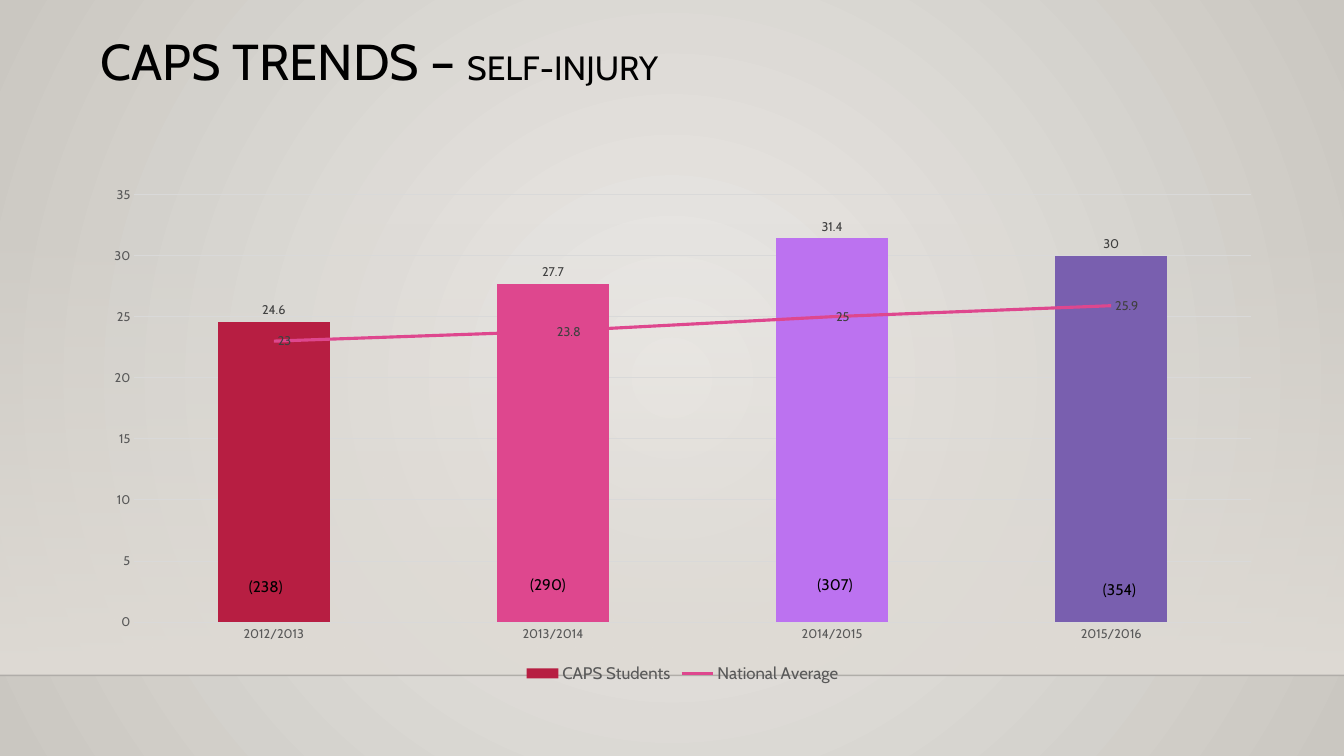
from lxml.etree import SubElement
from pptx import Presentation
from pptx.chart.data import CategoryChartData
from pptx.dml.color import RGBColor
from pptx.enum.chart import (XL_CHART_TYPE, XL_LABEL_POSITION, XL_LEGEND_POSITION,
                             XL_MARKER_STYLE, XL_TICK_MARK)
from pptx.enum.shapes import MSO_CONNECTOR, MSO_SHAPE
from pptx.oxml import parse_xml
from pptx.oxml.ns import nsdecls, qn
from pptx.util import Inches, Pt

W, H = 13.33, 7.5
FLOOR = 6.7
FONT = "Cabin"
TITLE = [("CAPS TRENDS – ", 36), ("SELF-INJURY", 24)]
YEARS = ["2012/2013", "2013/2014", "2014/2015", "2015/2016"]
SERIES = {"CAPS Students": [24.6, 27.7, 31.4, 30],
          "National Average": [23, 23.8, 25, 25.9]}
BAR_COLORS = ["B71E42", "DE478E", "BC72F0", "795FAF"]
AVERAGE_COLOR = "DE478E"
GRID_COLOR = "D9D9D9"
COUNTS = [("(238)", 2.37, 5.68), ("(290)", 5.16, 5.66),
          ("(307)", 8.01, 5.66), ("(354)", 10.84, 5.71)]


def rgb(value):
    return RGBColor.from_string(value)


def style(font, size, color="000000"):
    for name, value in {"name": FONT, "size": Pt(size)}.items():
        setattr(font, name, value)
    font.color.rgb = rgb(color)


def outline(line, color, width):
    line.color.rgb = rgb(color)
    line.width = Pt(width)


def gradient(fill, colors):
    fill.gradient()
    for stop, color in zip(fill.gradient_stops, colors):
        stop.color.rgb = rgb(color)


def set_alpha(color_element, percent):
    SubElement(color_element, qn("a:alpha")).set("val", str(percent * 1000))


def add_text(s, runs, left, top, width, height, **paragraph_format):
    tf = s.shapes.add_textbox(*map(Inches, (left, top, width, height))).text_frame
    tf.word_wrap = True
    p = tf.paragraphs[0]
    for name, value in paragraph_format.items():
        setattr(p, name, value)
    for text, size in runs:
        r = p.add_run()
        r.text = text
        style(r.font, size)


def add_backdrop(s):
    gradient(s.background.fill, ["ECEAE7", "CAC7C1"])
    lin = s.element.find(".//" + qn("a:lin"))
    lin.getparent().replace(lin, parse_xml(
        f'<a:path {nsdecls("a")} path="circle">'
        '<a:fillToRect l="50000" t="50000" r="50000" b="50000"/></a:path>'))

    wall = s.shapes.add_shape(MSO_SHAPE.RECTANGLE, 0, Inches(2.21), Inches(W), Inches(FLOOR - 2.21))
    wall.shadow.inherit = False
    wall.line.fill.background()
    gradient(wall.fill, ["DFDBD5", "DFDBD5"])
    wall.fill.gradient_angle = 270
    set_alpha(wall.element.spPr.find(".//" + qn("a:srgbClr")), 0)

    edge = s.shapes.add_connector(MSO_CONNECTOR.STRAIGHT, 0, Inches(FLOOR), Inches(W), Inches(FLOOR))
    outline(edge.line, "000001", 1)
    set_alpha(edge.element.spPr.find(".//" + qn("a:srgbClr")), 20)
    SubElement(edge.element.spPr, qn("a:effectLst"))


def move_to_line_plot(chart):
    bars = chart.plots[0]._element
    ser = bars.findall(qn("c:ser"))[1]
    lines = parse_xml(f'<c:lineChart {nsdecls("c")}><c:grouping val="standard"/>'
                      '<c:varyColors val="0"/><c:marker val="1"/></c:lineChart>')
    for bar_only in ser.findall(qn("c:invertIfNegative")):
        ser.remove(bar_only)
    lines.insert(2, ser)
    for axis in bars.findall(qn("c:axId")):
        SubElement(lines, qn("c:axId")).set("val", axis.get("val"))
    bars.addnext(lines)


def add_trend_chart(s):
    data = CategoryChartData()
    data.categories = YEARS
    for name, values in SERIES.items():
        data.add_series(name, values)
    chart = s.shapes.add_chart(XL_CHART_TYPE.COLUMN_CLUSTERED,
                               *map(Inches, (0.9, 1.75, 11.74, 5.07)), data).chart
    style(chart.font, 10)
    chart.has_title = False
    chart.has_legend = True
    chart.legend.position = XL_LEGEND_POSITION.BOTTOM
    chart.legend.include_in_layout = False
    style(chart.legend.font, 12, "595959")

    for axis in (chart.category_axis, chart.value_axis):
        axis.major_tick_mark = axis.minor_tick_mark = XL_TICK_MARK.NONE
        style(axis.tick_labels.font, 9, "595959")
    outline(chart.category_axis.format.line, GRID_COLOR, 0.75)
    chart.value_axis.format.line.fill.background()
    outline(chart.value_axis.major_gridlines.format.line, GRID_COLOR, 0.75)

    move_to_line_plot(chart)
    bar_plot, line_plot = chart.plots
    bar_plot.vary_by_categories = False
    bar_plot.gap_width = 150
    students, average = bar_plot.series[0], line_plot.series[0]
    for target, color in zip([students] + [students.points[i] for i in range(1, 4)], BAR_COLORS):
        target.format.fill.solid()
        target.format.fill.fore_color.rgb = rgb(color)
    outline(average.format.line, AVERAGE_COLOR, 2.25)
    average.marker.style = XL_MARKER_STYLE.NONE
    average.smooth = False

    for series, position in ((students, XL_LABEL_POSITION.OUTSIDE_END),
                             (average, XL_LABEL_POSITION.RIGHT)):
        labels = series.data_labels
        labels.show_value = True
        labels.position = position
        style(labels.font, 9, "404040")


def main():
    """Build the self-injury trend slide."""
    prs = Presentation()
    prs.slide_width, prs.slide_height = Inches(W), Inches(H)
    s = prs.slides.add_slide(prs.slide_layouts[6])
    add_backdrop(s)
    add_trend_chart(s)
    add_text(s, TITLE, 0.9, 0.32, 9.19, 1.43, line_spacing=0.9)
    for count, left, top in COUNTS:
        add_text(s, [(count, 11)], left, top, 0.6, 0.3)
    prs.save("out.pptx")


if __name__ == "__main__":
    main()
